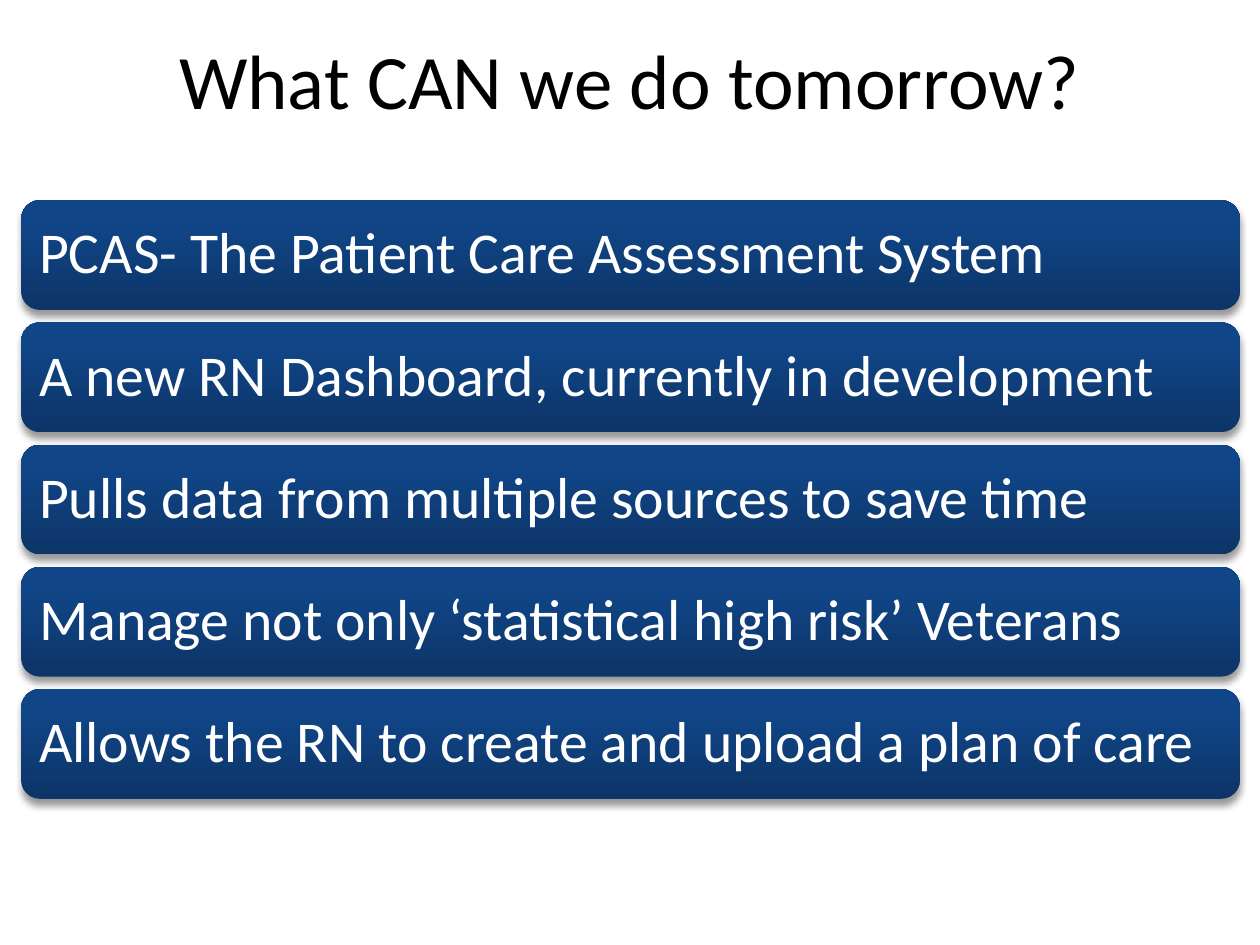
from copy import deepcopy

from lxml.etree import SubElement
from pptx import Presentation
from pptx.dml.color import RGBColor
from pptx.enum.shapes import MSO_SHAPE
from pptx.enum.text import MSO_ANCHOR, PP_ALIGN
from pptx.oxml.ns import qn
from pptx.util import Inches, Pt

BLACK = RGBColor(0x00, 0x00, 0x00)
WHITE = RGBColor(0xFF, 0xFF, 0xFF)
GRADIENT = [
    (0, RGBColor(0x0D, 0x35, 0x68)),
    (0.8, RGBColor(0x10, 0x45, 0x87)),
    (1, RGBColor(0x0E, 0x45, 0x8A)),
]
POINTS = [
    "PCAS- The Patient Care Assessment System",
    "A new RN Dashboard, currently in development",
    "Pulls data from multiple sources to save time",
    "Manage not only ‘statistical high risk’ Veterans",
    "Allows the RN to create and upload a plan of care",
]
BAR_TOP, BAR_PITCH = 1.59, 0.97


def write_text(shape, text, size, color, alignment):
    frame = shape.text_frame
    frame.word_wrap = True
    frame.vertical_anchor = MSO_ANCHOR.MIDDLE
    paragraph = frame.paragraphs[0]
    paragraph.text = text
    paragraph.alignment = alignment
    font_format = {"name": "Calibri", "size": Pt(size)}
    for name, value in font_format.items():
        setattr(paragraph.font, name, value)
    paragraph.font.color.rgb = color
    return paragraph


def add_soft_shadow(shape):
    shape.shadow.inherit = False
    effects = shape._element.spPr.find(qn("a:effectLst"))
    shadow = SubElement(
        effects, qn("a:outerShdw"), blurRad=str(Pt(4)), dist=str(Pt(3)),
        dir="5400000", rotWithShape="0")
    color = SubElement(shadow, qn("a:srgbClr"), val="000000")
    SubElement(color, qn("a:alpha"), val="40000")


presentation = Presentation()
presentation.slide_width = Inches(10)
presentation.slide_height = Inches(7.5)
slide = presentation.slides.add_slide(presentation.slide_layouts[6])

# Stacked bars, one per point
for index, point in enumerate(POINTS):
    bar = slide.shapes.add_shape(
        MSO_SHAPE.ROUNDED_RECTANGLE, Inches(0.17),
        Inches(BAR_TOP + index * BAR_PITCH), Inches(9.67), Inches(0.87))
    bar.line.fill.background()

    # Gradient from dark at the bottom to light at the top
    bar.fill.gradient()
    bar.fill.gradient_angle = 90
    stop_list = bar._element.spPr.find(".//" + qn("a:gsLst"))
    stop_list.append(deepcopy(stop_list[0]))
    for stop, (position, color) in zip(bar.fill.gradient_stops, GRADIENT):
        stop.position = position
        stop.color.rgb = color
    add_soft_shadow(bar)

    # The rounded corners add 0.04 inch to each inset
    for side in ("left", "top", "right", "bottom"):
        setattr(bar.text_frame, f"margin_{side}", Inches(0.1))
    paragraph = write_text(bar, point, 33, WHITE, PP_ALIGN.LEFT)
    paragraph.line_spacing = 0.9

# Title
title = slide.shapes.add_textbox(0, 0, Inches(10), Inches(1.25))
write_text(title, "What CAN we do tomorrow?", 44, BLACK, PP_ALIGN.CENTER)

presentation.save("out.pptx")
